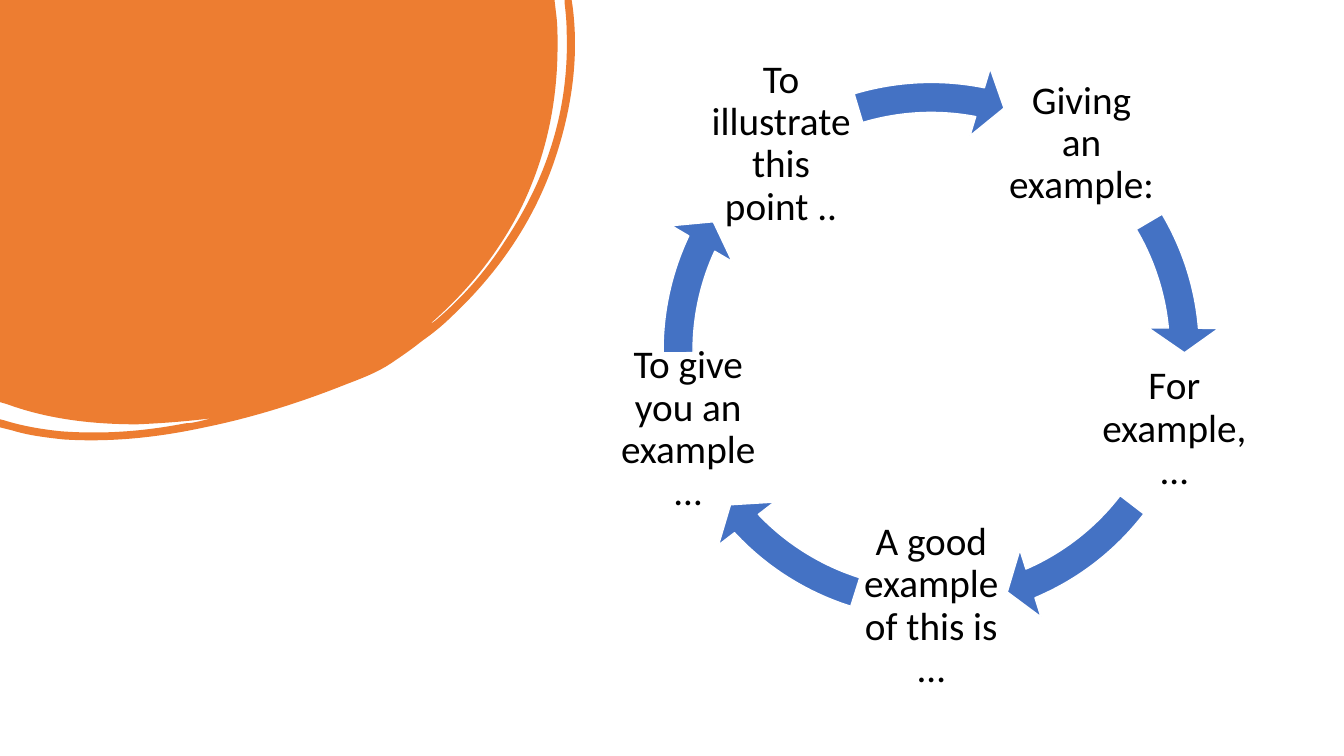
"""Build a slide with a cycle of five phrases for giving examples."""
import math

from lxml import etree
from pptx import Presentation
from pptx import util as u
from pptx.dml.color import RGBColor
from pptx.enum import shapes, text
from pptx.oxml import ns

ORANGE = RGBColor(0xED, 0x7D, 0x31)
BLUE = RGBColor(0x44, 0x72, 0xC4)
WHITE = RGBColor(0xFF, 0xFF, 0xFF)
BLACK = RGBColor(0, 0, 0)

presentation = Presentation()
presentation.slide_width = u.Inches(13.33)
presentation.slide_height = u.Inches(7.5)
slide = presentation.slides.add_slide(presentation.slide_layouts[6])
column = presentation.slide_width / 100
row = presentation.slide_height / 100

blob_segments = [
    (5.5, 0), (5.52, 0.17),
    (5.53, 0.26, 5.53, 0.36, 5.53, 0.45),
    (5.53, 1.01, 5.42, 1.54, 5.18, 2.04),
    (4.96, 2.49, 4.65, 2.88, 4.27, 3.21),
    (4.29, 3.21, 4.3, 3.19, 4.32, 3.18),
    (4.59, 2.95, 4.82, 2.69, 5.01, 2.39),
    (5.43, 1.76, 5.65, 1.07, 5.62, 0.3),
    (5.62, 0.21, 5.61, 0.12, 5.6, 0.03),
    (5.6, 0), (5.67, 0), (5.68, 0.07),
    (5.74, 0.54, 5.68, 1.02, 5.53, 1.5),
    (5.33, 2.14, 4.97, 2.68, 4.48, 3.14),
    (4.39, 3.23, 4.29, 3.31, 4.19, 3.38),
    (4.09, 3.46, 3.99, 3.53, 3.87, 3.61),
    (3.75, 3.69, 3.6, 3.75, 3.44, 3.81),
    (2.99, 3.99, 2.52, 4.14, 2.03, 4.24),
    (1.57, 4.34, 1.1, 4.39, 0.63, 4.36),
    (0.45, 4.34, 0.28, 4.32, 0.12, 4.27),
    (0, 4.24), (0, 4.16), (0.04, 4.17),
    (0.23, 4.23, 0.42, 4.26, 0.61, 4.28),
    (1.03, 4.31, 1.43, 4.28, 1.84, 4.2),
    (1.89, 4.2, 1.93, 4.19, 1.98, 4.18),
    (2.02, 4.17, 2.06, 4.16, 2.1, 4.15),
    (1.86, 4.18, 1.61, 4.2, 1.36, 4.21),
    (0.92, 4.21, 0.48, 4.16, 0.07, 4.01),
    (0, 3.99),
]
units = 1000
builder = slide.shapes.build_freeform(0, 0, scale=u.Inches(1) / units)
builder.add_line_segments(
    [(round(segment[-2] * units), round(segment[-1] * units)) for segment in blob_segments],
    close=True)
blob = builder.convert_to_shape()
line_elements = list(blob.element.iter(ns.qn("a:lnTo")))
for element, segment in zip(line_elements, blob_segments):
    if len(segment) == 6:
        element.tag = ns.qn("a:cubicBezTo")
        element.remove(element[0])
        for x, y in zip(segment[::2], segment[1::2]):
            etree.SubElement(element, ns.qn("a:pt"),
                             x=str(round(x * units)), y=str(round(y * units)))
blob.shadow.inherit = False
blob.fill.solid()
blob.fill.fore_color.rgb = ORANGE
blob.line.fill.background()

center_x, center_y = 69.29 * column, 46.37 * row
radius = 33.8 * row
label_side = 20.27 * row
ring_side = 76.27 * row
cycle = [
    ("Giving an example:", 212.95, 197.65),
    ("For example,…", 40.16, 22.52),
    ("A good example of this is …", 82.13, 64.48),
    ("To give you an example…", 123, 107.7),
    ("To illustrate this point ..", 168.67, 151.97),
]
for index, (phrase, arrow_end, arrow_start) in enumerate(cycle):
    angle = math.radians(-54 + index * 360 / len(cycle))
    label = slide.shapes.add_textbox(
        round(center_x + radius * math.cos(angle) - label_side / 2),
        round(center_y + radius * math.sin(angle) - label_side / 2),
        round(label_side), round(label_side))
    frame = label.text_frame
    frame.word_wrap = True
    frame.vertical_anchor = text.MSO_ANCHOR.MIDDLE
    frame.margin_left = frame.margin_right = u.Inches(0.04)
    frame.margin_top = frame.margin_bottom = u.Inches(0.04)
    frame.text = phrase
    paragraph = frame.paragraphs[0]
    paragraph.alignment = text.PP_ALIGN.CENTER
    paragraph.line_spacing = 0.9
    font = paragraph.runs[0].font
    font.name = "Calibri"
    font.size = u.Pt(28)
    font.color.rgb = BLACK

    arrow = slide.shapes.add_shape(
        shapes.MSO_SHAPE.CIRCULAR_ARROW,
        round(center_x - ring_side / 2), round(center_y - ring_side / 2),
        round(ring_side), round(ring_side))
    for position, value in enumerate((5.2 / 100, 3.35, arrow_end, arrow_start, 6.1 / 100)):
        arrow.adjustments[position] = value
    arrow.shadow.inherit = False
    arrow.fill.solid()
    arrow.fill.fore_color.rgb = BLUE
    arrow.line.color.rgb = WHITE
    arrow.line.width = u.Pt(1)

presentation.save("out.pptx")
